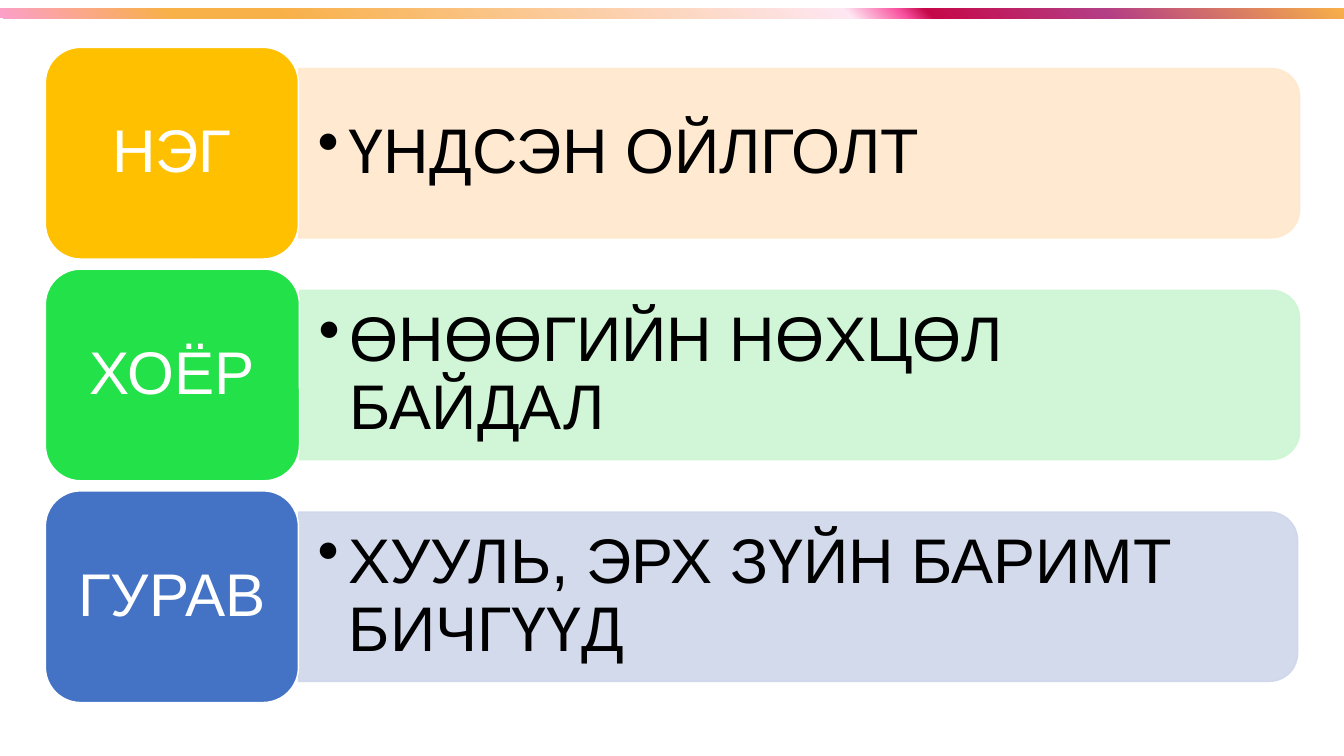
from lxml import etree
from pptx import Presentation
from pptx.dml.color import RGBColor
from pptx.enum import shapes, text
from pptx.oxml import ns
from pptx.util import Inches, Pt

WHITE = RGBColor(0xFF, 0xFF, 0xFF)
BLACK = RGBColor(0x00, 0x00, 0x00)
AMBER = RGBColor(0xFF, 0xC0, 0x00)
GREEN = RGBColor(0x23, 0xE1, 0x48)
BLUE = RGBColor(0x44, 0x72, 0xC4)
PALE_AMBER = RGBColor(0xFF, 0xE8, 0xCC)
PALE_GREEN = RGBColor(0xCC, 0xF6, 0xD3)
PALE_BLUE = RGBColor(0xCF, 0xD6, 0xEA)
PINK = RGBColor(0xFC, 0x9F, 0xCB)
ORANGE = RGBColor(0xF8, 0xB0, 0x49)
BLUSH = RGBColor(0xFE, 0xE7, 0xF2)
HOT_PINK = RGBColor(0xF9, 0x52, 0xA0)
CRIMSON = RGBColor(0xC5, 0x08, 0x49)
PURPLE = RGBColor(0xB4, 0x3E, 0x85)

STRIPE_STOPS = [(0, PINK), (13, ORANGE), (21, ORANGE), (63, BLUSH),
                (67, HOT_PINK), (69, CRIMSON), (82, PURPLE), (100, ORANGE)]

# Label, topic, tile colour, bar colour, tile width, bar width
ROWS = [
    ("НЭГ", "ҮНДСЭН ОЙЛГОЛТ", AMBER, PALE_AMBER, 2.51, 9.93),
    ("ХОЁР", "ӨНӨӨГИЙН НӨХЦӨЛ БАЙДАЛ", GREEN, PALE_GREEN, 2.52, 9.92),
    ("ГУРАВ", "ХУУЛЬ, ЭРХ ЗҮЙН БАРИМТ БИЧГҮҮД", BLUE, PALE_BLUE, 2.51, 9.91),
]
ROW_LEFT, ROW_TOP, ROW_HEIGHT, ROW_PITCH = 0.45, 0.47, 2.1, 2.2
BAR_HEIGHT, TOPIC_HEIGHT = 1.68, 1.51


def add_shape(slide, kind, x, y, w, h):
    sp = slide.shapes.add_shape(kind, Inches(x), Inches(y), Inches(w), Inches(h))
    sp.shadow.inherit = False
    return sp


def paint(sp, fill, line):
    for part, color in ((sp.fill, fill), (sp.line.fill, line)):
        part.solid()
        part.fore_color.rgb = color
    sp.line.width = Pt(1)


def write(sp, words, size, color, align, inset):
    tf = sp.text_frame
    frame_format = {
        "word_wrap": True, "vertical_anchor": text.MSO_ANCHOR.MIDDLE,
        "margin_left": Inches(inset), "margin_right": Inches(inset),
        "margin_top": Inches(0.09), "margin_bottom": Inches(0.09),
    }
    for name, value in frame_format.items():
        setattr(tf, name, value)
    p = tf.paragraphs[0]
    p.alignment, p.line_spacing = align, 0.9
    r = p.add_run()
    r.text = words
    for name, value in {"name": "Arial", "size": Pt(size)}.items():
        setattr(r.font, name, value)
    r.font.color.rgb = color
    return p


def add_stripe(slide, x, y, w, h):
    sp = add_shape(slide, shapes.MSO_SHAPE.RECTANGLE, x, y, w, h)
    sp.line.fill.background()
    sp.fill.gradient()
    sp.fill.gradient_angle = 45
    stops = sp._element.spPr.find(".//" + ns.qn("a:gsLst"))
    stops.clear()
    for percent, color in STRIPE_STOPS:
        gs = etree.SubElement(stops, ns.qn("a:gs"), pos=str(percent * 1000))
        etree.SubElement(gs, ns.qn("a:srgbClr"), val=str(color))


def add_bar(slide, x, y, w, h, color):
    # Turned a quarter so that the rounded corners face right
    sp = add_shape(slide, shapes.MSO_SHAPE.ROUND_2_SAME_RECTANGLE,
                   x + (w - h) / 2, y + (h - w) / 2, h, w)
    sp.rotation = 90
    paint(sp, color, color)
    for clr in sp._element.spPr.iter(ns.qn("a:srgbClr")):
        etree.SubElement(clr, ns.qn("a:alpha"), val="90000")


def add_topic(slide, x, y, w, h, words):
    sp = slide.shapes.add_textbox(Inches(x), Inches(y), Inches(w), Inches(h))
    p = write(sp, words, 45, BLACK, text.PP_ALIGN.LEFT, 0.19)
    pPr = p._p.get_or_add_pPr()
    pPr.set("marL", str(Inches(0.31)))
    pPr.set("indent", str(-Inches(0.31)))
    etree.SubElement(pPr, ns.qn("a:buChar"), char="•")


def add_row(slide, x, y, h, row):
    label, topic, tile_color, bar_color, tile_w, bar_w = row
    bar_x, middle = x + tile_w, y + h / 2
    add_bar(slide, bar_x, middle - BAR_HEIGHT / 2, bar_w, BAR_HEIGHT, bar_color)
    add_topic(slide, bar_x, middle - TOPIC_HEIGHT / 2, bar_w - 0.08, TOPIC_HEIGHT, topic)
    tile = add_shape(slide, shapes.MSO_SHAPE.ROUNDED_RECTANGLE, x, y, tile_w, h)
    paint(tile, tile_color, WHITE)
    write(tile, label, 43, WHITE, text.PP_ALIGN.CENTER, 0.18)


def main():
    prs = Presentation()
    prs.slide_width, prs.slide_height = Inches(13.33), Inches(7.5)
    slide = prs.slides.add_slide(prs.slide_layouts[6])

    # Gradient stripe along the top
    add_stripe(slide, 0, 0.08, 13.33, 0.1)

    # Numbered topics
    for i, row in enumerate(ROWS):
        add_row(slide, ROW_LEFT, ROW_TOP + i * ROW_PITCH, ROW_HEIGHT, row)

    prs.save("out.pptx")


if __name__ == "__main__":
    main()
